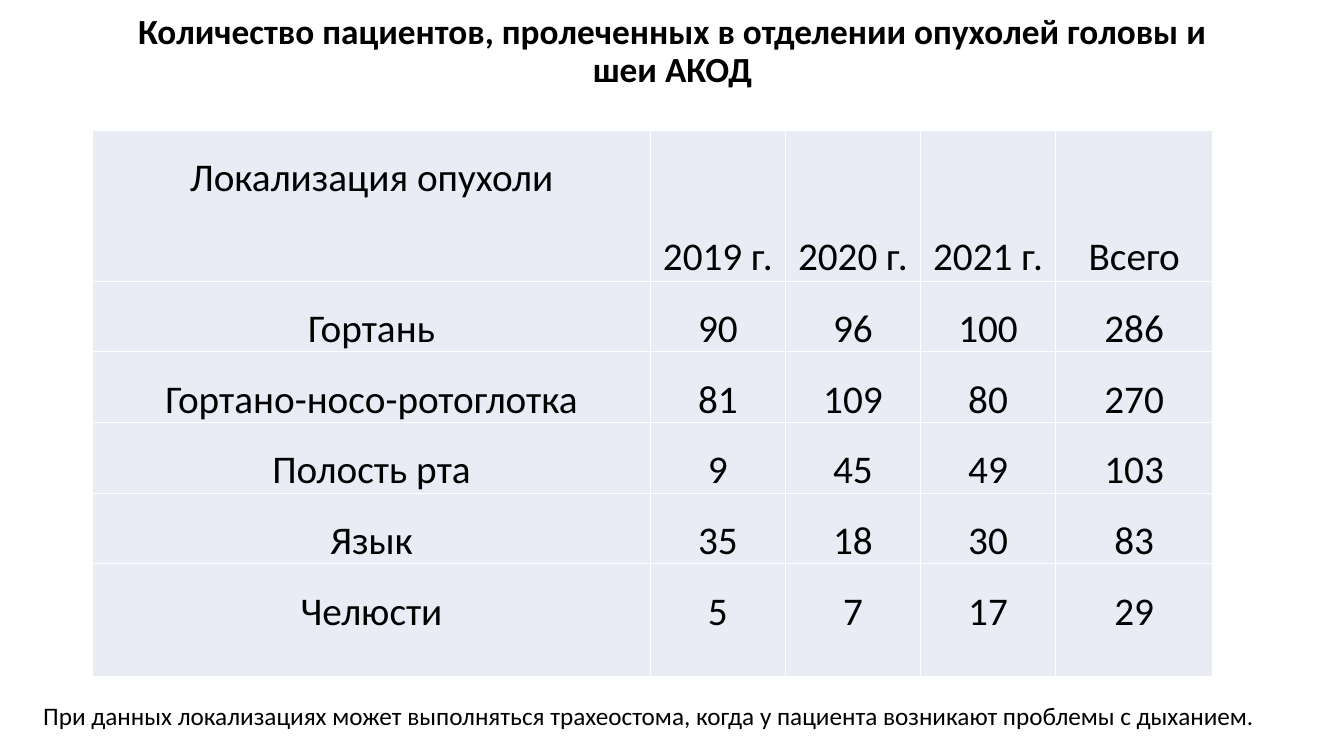
from lxml import etree
from pptx import Presentation
from pptx.dml.color import RGBColor
from pptx.enum.text import MSO_ANCHOR as Anchor, MSO_AUTO_SIZE as AutoSize, PP_ALIGN as Align
from pptx.oxml.ns import qn
from pptx.util import Inches, Pt

COLUMN_WIDTHS = [5.53, 1.34, 1.34, 1.34, 1.56]
ROW_HEIGHTS = [1.5, 0.65, 0.65, 0.65, 0.65, 1.12]
PATIENTS = [
    ["Локализация опухоли", "2019 г.", "2020 г.", "2021 г.", "Всего"],
    ["Гортань", 90, 96, 100, 286],
    ["Гортано-носо-ротоглотка", 81, 109, 80, 270],
    ["Полость рта", 9, 45, 49, 103],
    ["Язык", 35, 18, 30, 83],
    ["Челюсти", 5, 7, 17, 29],
]


def color(hex_code):
    """Turn a hex string into a colour."""
    return RGBColor.from_string(hex_code)


def write(frame, text, size, align=Align.LEFT, bold=False):
    """Write one styled paragraph into a text frame and return it."""
    paragraph = frame.paragraphs[0]
    paragraph.text = text
    paragraph.alignment = align
    font = paragraph.font
    font.name, font.size, font.bold = "Calibri", Pt(size), bold
    font.color.rgb = color("000000")
    return paragraph


def add_title(slide, left, top, width, height):
    """Add the centred heading."""
    frame = slide.shapes.add_textbox(*map(Inches, (left, top, width, height))).text_frame
    frame.word_wrap = True
    frame.vertical_anchor = Anchor.MIDDLE
    heading = write(
        frame,
        "Количество пациентов, пролеченных в отделении опухолей головы и шеи АКОД",
        25.2, Align.CENTER, True,
    )
    heading.line_spacing = 0.9


def add_borders(cell, hex_code):
    """Draw a one-point line on every side of a cell."""
    properties = cell._tc.get_or_add_tcPr()
    for position, side in enumerate(("a:lnL", "a:lnR", "a:lnT", "a:lnB")):
        line = etree.Element(qn(side), w=str(Pt(1)))
        fill = etree.SubElement(line, qn("a:solidFill"))
        etree.SubElement(fill, qn("a:srgbClr"), val=hex_code)
        properties.insert(position, line)


def add_patient_table(slide, left, top, width, height):
    """Add the table of patients by tumour site and year."""
    table = slide.shapes.add_table(
        len(ROW_HEIGHTS), len(COLUMN_WIDTHS), *map(Inches, (left, top, width, height))
    ).table
    table.first_row = table.horz_banding = False
    for column, column_width in zip(table.columns, COLUMN_WIDTHS):
        column.width = Inches(column_width)
    for row, row_height, values in zip(table.rows, ROW_HEIGHTS, PATIENTS):
        row.height = Inches(row_height)
        for index, (cell, value) in enumerate(zip(row.cells, values)):
            cell.margin_left = cell.margin_right = Inches(0.07)
            cell.margin_top = cell.margin_bottom = 0
            is_year = values is PATIENTS[0] and index > 0
            cell.vertical_anchor = Anchor.BOTTOM if is_year else Anchor.TOP
            cell.fill.solid()
            cell.fill.fore_color.rgb = color("E9EBF5")
            entry = write(cell.text_frame, str(value), 28, Align.CENTER)
            entry.line_spacing = 1.5
            entry.space_after = Pt(5)
            add_borders(cell, "FFFFFF")


def add_note(slide, left, top, width, height):
    """Add the remark under the table."""
    frame = slide.shapes.add_textbox(*map(Inches, (left, top, width, height))).text_frame
    frame.word_wrap = False
    frame.auto_size = AutoSize.SHAPE_TO_FIT_TEXT
    write(
        frame,
        "При данных локализациях может выполняться трахеостома, "
        "когда у пациента возникают проблемы с дыханием.",
        18,
    )


def main():
    """Build and save the slide."""
    deck = Presentation()
    deck.slide_width, deck.slide_height = Inches(13.33), Inches(7.5)
    slide = deck.slides.add_slide(deck.slide_layouts[6])
    add_title(slide, 0.92, 0.07, 11.5, 0.89)
    add_patient_table(slide, 0.92, 1.29, sum(COLUMN_WIDTHS), sum(ROW_HEIGHTS))
    add_note(slide, 0.33, 6.9, 12.28, 0.4)
    deck.save("out.pptx")


if __name__ == "__main__":
    main()
